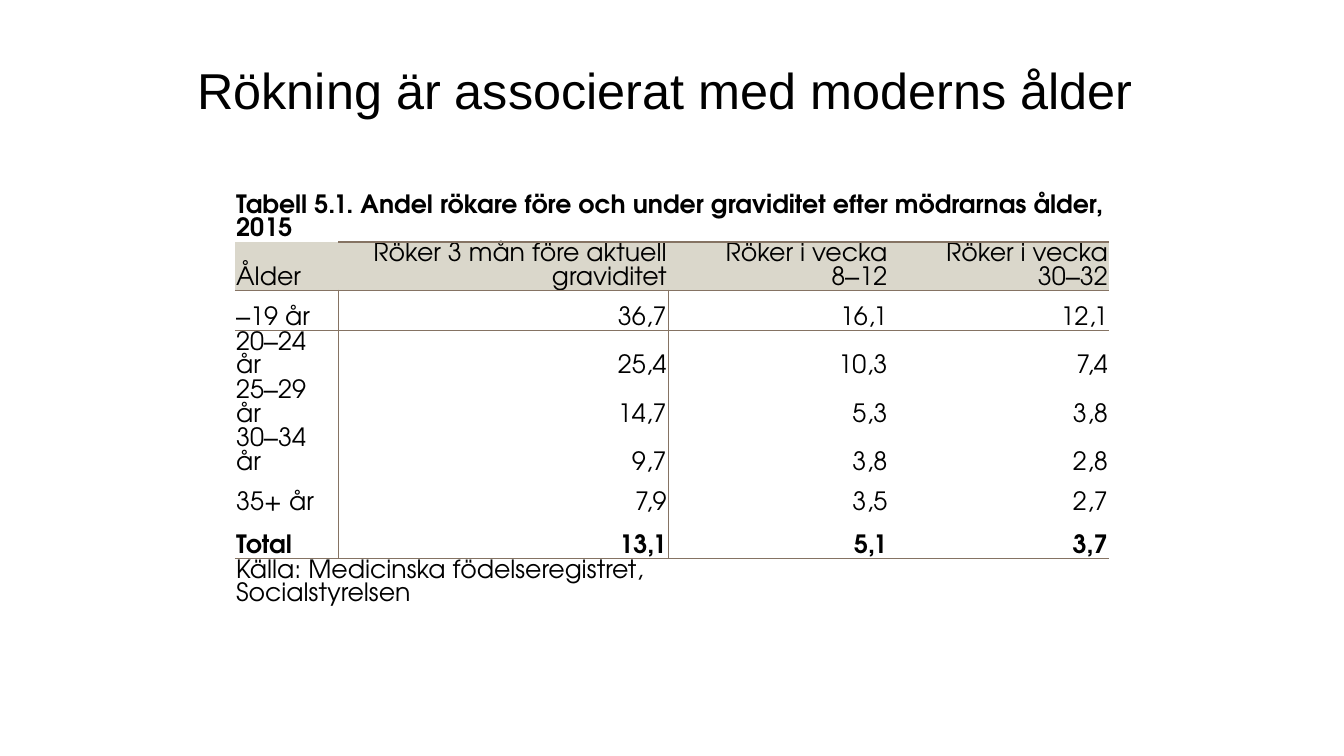
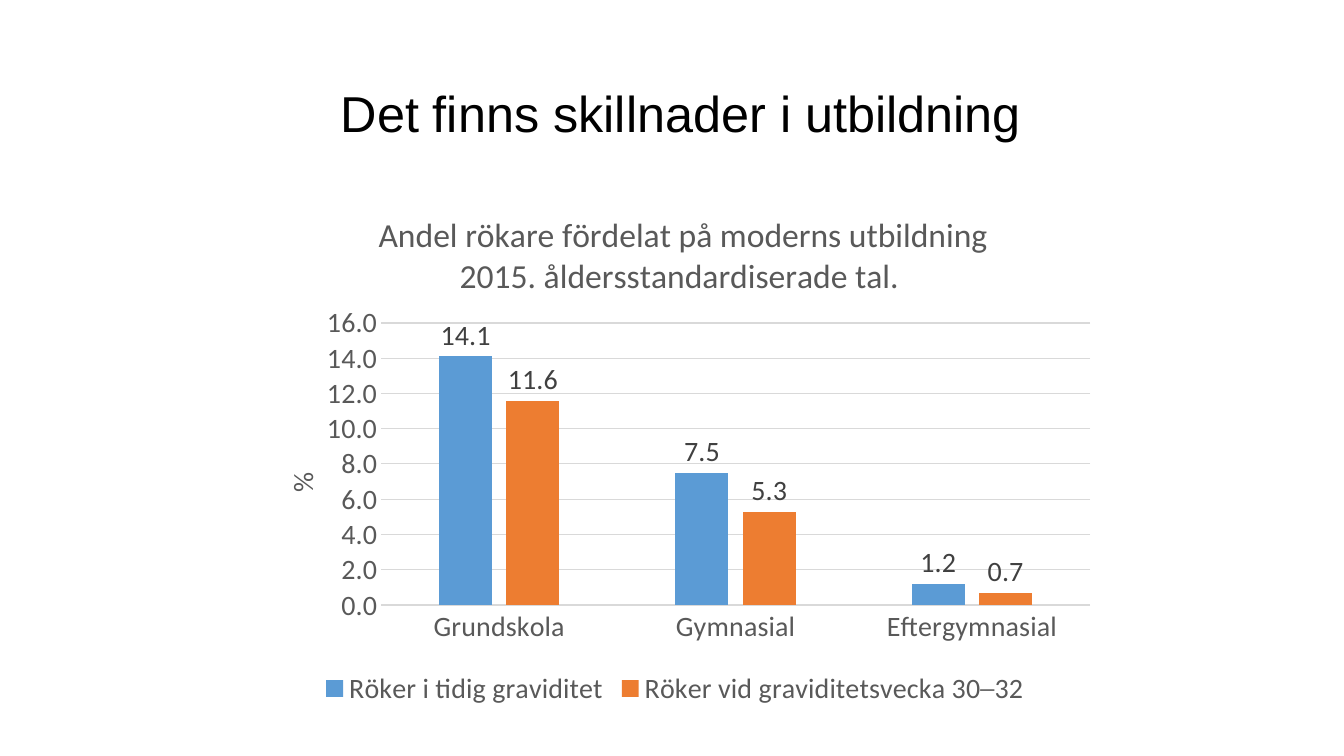
from lxml import etree
from pptx import Presentation
from pptx.chart.data import CategoryChartData
from pptx.dml.color import RGBColor
from pptx.enum.chart import (
    XL_CHART_TYPE as ChartType,
    XL_LABEL_POSITION as LabelPosition,
    XL_LEGEND_POSITION as LegendPosition,
    XL_TICK_MARK as TickMark,
)
from pptx.enum.text import MSO_ANCHOR as Anchor, MSO_AUTO_SIZE as AutoSize, PP_ALIGN as Align
from pptx.oxml.ns import qn
from pptx.util import Cm, Pt

# Shared colours and fonts
BLACK = RGBColor(0x00, 0x00, 0x00)
HEADER_FILL = RGBColor(0xDA, 0xD7, 0xCB)
RULE_BROWN = RGBColor(0x85, 0x73, 0x63)
AXIS_GREY = RGBColor(0x59, 0x59, 0x59)
LABEL_GREY = RGBColor(0x40, 0x40, 0x40)
GRID_GREY = RGBColor(0xD9, 0xD9, 0xD9)
BLUE = RGBColor(0x5B, 0x9B, 0xD5)
ORANGE = RGBColor(0xED, 0x7D, 0x31)
TITLE_FONT, TABLE_FONT, CHART_FONT = "Arial", "TeX Gyre Adventor", "Calibri"
NO_STYLE = "{2D5ABB26-0587-4C30-8999-92F81FD0307C}"

# Content: boxes are left, top, width, height in cm
AGE_TITLE = "Rökning är associerat med moderns ålder"
AGE_TITLE_BOX = (4.72, 0.76, 24.41, 3.18)
AGE_ROWS = [
    ("Tabell 5.1. Andel rökare före och under graviditet efter mödrarnas ålder, 2015",),
    ("Ålder", "Röker 3 mån före aktuell graviditet", "Röker i vecka 8─12", "Röker i vecka 30─32"),
    ("─19 år", "36,7", "16,1", "12,1"),
    ("20─24 år", "25,4", "10,3", "7,4"),
    ("25─29 år", "14,7", "5,3", "3,8"),
    ("30─34 år", "9,7", "3,8", "2,8"),
    ("35+ år", "7,9", "3,5", "2,7"),
    ("Total", "13,1", "5,1", "3,7"),
    ("Källa: Medicinska födelseregistret, Socialstyrelsen",),
]
CAPTION, HEADER, TOTAL, SOURCE = 0, 1, 7, 8
COLUMN_WIDTHS = (2.61, 8.3, 5.56, 5.56)
ROW_HEIGHTS = (1.57,) + (1.02,) * 6 + (1.07,) * 2
TABLE_CORNER = (5.92, 4.52)

EDUCATION_TITLE = "Det finns skillnader i utbildning"
EDUCATION_TITLE_BOX = (8.33, 1.35, 22.86, 3.18)
CHART_BOX = (6.12, 4.52, 21.79, 13.41)
CHART_TITLE = "Andel rökare fördelat på moderns utbildning 2015. åldersstandardiserade tal. "
EDUCATION_LEVELS = ("Grundskola", "Gymnasial", "Eftergymnasial")
SMOKER_SERIES = [
    ("Röker i tidig graviditet", (14.1, 7.5, 1.2), BLUE),
    ("Röker vid graviditetsvecka 30─32", (11.6, 5.3, 0.7), ORANGE),
]


def style_font(font, name, size, color, bold=False):
    font.name, font.size, font.bold = name, Pt(size), bold
    font.color.rgb = color


def add_page(deck, title, box):
    """Add a title-only slide with the shared title style."""
    page = deck.slides.add_slide(deck.slide_layouts[5])
    holder = page.shapes.title
    holder.left, holder.top, holder.width, holder.height = map(Cm, box)
    frame = holder.text_frame
    frame.text = title
    frame.word_wrap = True
    frame.auto_size = AutoSize.NONE
    frame.vertical_anchor = Anchor.MIDDLE
    para = frame.paragraphs[0]
    para.alignment, para.line_spacing = Align.LEFT, 0.9
    style_font(para.runs[0].font, TITLE_FONT, 36, BLACK)
    return page


def cell_rules(row, column):
    """Return the rule weights of a cell, keyed by side."""
    rules = {}
    if HEADER < row < SOURCE:
        if column < 2:
            rules["R" if column == 0 else "L"] = 0.5
    if row == HEADER and column > 0:
        rules["T"] = 1.5
    for upper, weight in ((HEADER, 0.5), (TOTAL, 1)):
        if row == upper:
            rules["B"] = weight
        elif row == upper + 1:
            rules["T"] = weight
    return rules


def draw_rules(cell, rules):
    properties = cell._tc.get_or_add_tcPr()
    for side in "LRTB":
        if side in rules:
            line = etree.SubElement(properties, qn(f"a:ln{side}"), w=str(Pt(rules[side])))
            fill = etree.SubElement(line, qn("a:solidFill"))
            etree.SubElement(fill, qn("a:srgbClr"), val=str(RULE_BROWN))


def add_age_table(page):
    width, height = sum(COLUMN_WIDTHS), sum(ROW_HEIGHTS)
    frame = page.shapes.add_table(len(ROW_HEIGHTS), len(COLUMN_WIDTHS),
                                  *map(Cm, (*TABLE_CORNER, width, height)))
    table = frame.table
    table.first_row = table.horz_banding = False
    table._tbl.tblPr.find(qn("a:tableStyleId")).text = NO_STYLE
    for column, size in zip(table.columns, COLUMN_WIDTHS):
        column.width = Cm(size)
    for row, size in zip(table.rows, ROW_HEIGHTS):
        row.height = Cm(size)
    table.cell(CAPTION, 0).merge(table.cell(CAPTION, 3))
    table.cell(SOURCE, 0).merge(table.cell(SOURCE, 1))

    for r, texts in enumerate(AGE_ROWS):
        for c in range(len(COLUMN_WIDTHS)):
            cell = table.cell(r, c)
            cell.vertical_anchor = Anchor.BOTTOM
            cell.margin_left = cell.margin_right = cell.margin_top = Cm(0.03)
            cell.margin_bottom = 0
            draw_rules(cell, cell_rules(r, c))
            if r == HEADER:
                cell.fill.solid()
                cell.fill.fore_color.rgb = HEADER_FILL
            else:
                cell.fill.background()
            if c < len(texts):
                para = cell.text_frame.paragraphs[0]
                para.text = texts[c]
                para.alignment = Align.RIGHT if c else Align.LEFT
                style_font(para.runs[0].font, TABLE_FONT, 18, BLACK, r in (CAPTION, TOTAL))


def place(element, **fractions):
    """Give a chart part a fixed place, as fractions of the chart."""
    old = element.find(qn("c:layout"))
    if old is not None:
        element.remove(old)
    layout = etree.Element(qn("c:layout"))
    manual = etree.SubElement(layout, qn("c:manualLayout"))
    if "w" in fractions:
        etree.SubElement(manual, qn("c:layoutTarget"), val="inner")
    for mode in ("xMode", "yMode"):
        etree.SubElement(manual, qn(f"c:{mode}"), val="edge")
    for key, value in fractions.items():
        etree.SubElement(manual, qn(f"c:{key}"), val=str(value))
    element.insert(0 if element.find(qn("c:tx")) is None else 1, layout)


def set_chart_text(title, text, size):
    para = title.text_frame.paragraphs[0]
    para.text = text
    style_font(para.runs[0].font, CHART_FONT, size, AXIS_GREY)


def add_education_chart(page):
    data = CategoryChartData(number_format="0.0")
    data.categories = EDUCATION_LEVELS
    for name, values, _ in SMOKER_SERIES:
        data.add_series(name, values)
    chart = page.shapes.add_chart(ChartType.COLUMN_CLUSTERED, *map(Cm, CHART_BOX), data).chart
    style_font(chart.font, CHART_FONT, 20, BLACK)

    # Columns and their labels
    plot = chart.plots[0]
    plot.gap_width, plot.overlap, plot.vary_by_categories = 219, -27, False
    for series, (_, _, color) in zip(plot.series, SMOKER_SERIES):
        series.invert_if_negative = False
        series.format.fill.solid()
        series.format.fill.fore_color.rgb = color
    plot.has_data_labels = True
    labels = plot.data_labels
    labels.show_value, labels.position = True, LabelPosition.OUTSIDE_END
    labels.number_format, labels.number_format_is_linked = "0.0", False
    style_font(labels.font, CHART_FONT, 20, LABEL_GREY)

    # Axes
    levels, shares = chart.category_axis, chart.value_axis
    for axis in (levels, shares):
        axis.major_tick_mark = axis.minor_tick_mark = TickMark.NONE
        style_font(axis.tick_labels.font, CHART_FONT, 20, AXIS_GREY)
    shares.minimum_scale, shares.maximum_scale, shares.major_unit = 0, 16, 2
    shares.tick_labels.number_format = "0.0"
    shares.tick_labels.number_format_is_linked = False
    shares.format.line.fill.background()
    shares.has_major_gridlines = True
    for line in (levels.format.line, shares.major_gridlines.format.line):
        line.color.rgb, line.width = GRID_GREY, Pt(0.75)

    # Titles and legend
    chart.has_title = True
    set_chart_text(chart.chart_title, CHART_TITLE, 24)
    shares.has_title = True
    set_chart_text(shares.axis_title, "%", 20)
    chart.has_legend = True
    chart.legend.position = LegendPosition.BOTTOM
    chart.legend.include_in_layout = False
    style_font(chart.legend.font, CHART_FONT, 20, AXIS_GREY)

    # Places inside the chart
    place(chart.chart_title.element, x=0.15, y=0.05)
    place(shares.axis_title.element, x=0.04, y=0.54)
    place(chart.element.find(".//" + qn("c:plotArea")), x=0.16, y=0.27, w=0.82, h=0.53)


def main():
    deck = Presentation()
    deck.slide_width, deck.slide_height = Cm(33.87), Cm(19.05)
    add_age_table(add_page(deck, AGE_TITLE, AGE_TITLE_BOX))
    add_education_chart(add_page(deck, EDUCATION_TITLE, EDUCATION_TITLE_BOX))
    deck.save("out.pptx")


if __name__ == "__main__":
    main()
